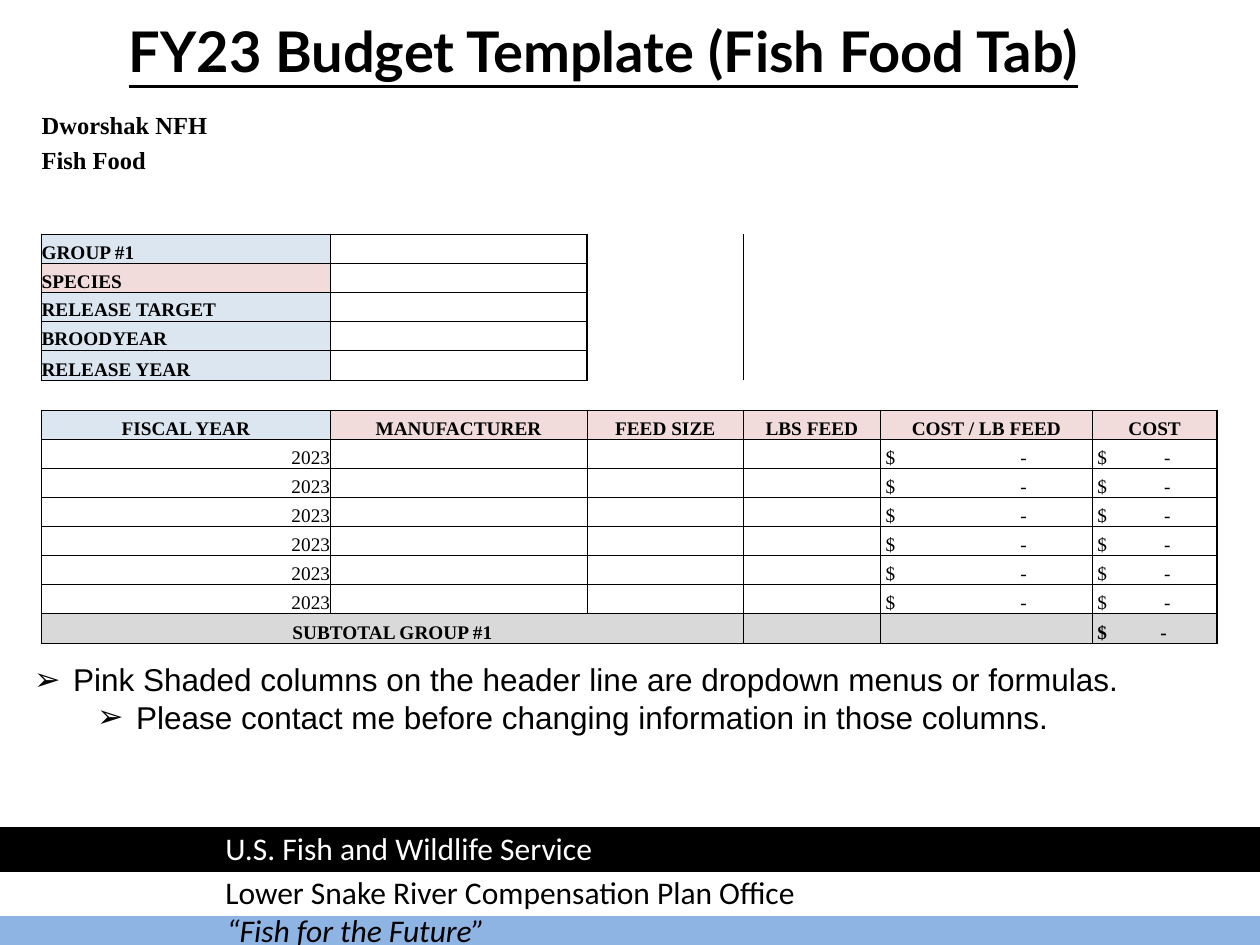
"""Build the fish food budget template slide."""
import lxml.etree
import pptx
import pptx.dml.color
import pptx.enum.shapes
import pptx.enum.text
import pptx.oxml.ns
import pptx.util

Inches = pptx.util.Inches
Pt = pptx.util.Pt
qn = pptx.oxml.ns.qn
ALIGN = pptx.enum.text.PP_ALIGN
BLUE, PINK, GRAY, WHITE, BLACK = "DCE6F1", "F2DCDB", "D9D9D9", "FFFFFF", "000000"


def color(value):
    """Return the colour for a hex string."""
    return pptx.dml.color.RGBColor.from_string(value)


def style(para, name, size, value=BLACK, bold=False):
    """Set the font of a paragraph."""
    para.font.name = name
    para.font.size = Pt(size)
    para.font.color.rgb = color(value)
    para.font.bold = bold


deck = pptx.Presentation()
deck.slide_width, deck.slide_height = Inches(10), Inches(7.5)
page = deck.slides.add_slide(deck.slide_layouts[1])

for left, top, fill in [(-0.01, 7.17, "8EB4E3"), (0, 6.93, WHITE), (0, 6.58, BLACK)]:
    band = page.shapes.add_shape(pptx.enum.shapes.MSO_SHAPE.RECTANGLE,
                                 Inches(left), Inches(top), Inches(10), Inches(0.33))
    band.shadow.inherit = False
    band.fill.solid()
    band.fill.fore_color.rgb = color(fill)
    band.line.color.rgb = color(fill)
    band.line.width = Pt(2)

footer_lines = [
    ("“Fish for the Future”", 1.7, 7.18, 2.3, BLACK, True),
    ("U.S. Fish and Wildlife Service", 1.69, 6.53, 4.16, WHITE, False),
    ("Lower Snake River Compensation Plan Office", 1.69, 6.88, 4.97, BLACK, False),
]
for text, left, top, width, value, italic in footer_lines:
    box = page.shapes.add_textbox(Inches(left), Inches(top), Inches(width), Inches(0.4))
    box.text_frame.word_wrap = True
    para = box.text_frame.paragraphs[0]
    para.text = text
    style(para, "Calibri", 18, value)
    para.font.italic = italic

title, body = page.shapes.title, page.placeholders[1]
title.text_frame.text = "FY23 Budget Template (Fish Food Tab)"
body.text_frame.text = ("Pink Shaded columns on the header line are dropdown menus or formulas.\n"
                        "Please contact me before changing information in those columns.")
for box, bounds in [(title, (0.92, 0.08, 7.83, 0.64)), (body, (0.17, 5.19, 8.89, 1.01))]:
    box.left, box.top, box.width, box.height = map(Inches, bounds)
    box.text_frame.word_wrap = False
    box.text_frame.auto_size = pptx.enum.text.MSO_AUTO_SIZE.SHAPE_TO_FIT_TEXT
    box.text_frame.vertical_anchor = pptx.enum.text.MSO_ANCHOR.TOP
    for para in box.text_frame.paragraphs:
        para.alignment = ALIGN.LEFT
        para.space_before = Pt(0)

heading = title.text_frame.paragraphs[0]
style(heading, "Lato", 32, bold=True)
heading.font.underline = True

for level, para in enumerate(body.text_frame.paragraphs):
    para.level = level
    properties = para._p.get_or_add_pPr()
    properties.set("marL", str(Inches(0.31 + 0.5 * level)))
    properties.set("indent", str(Inches(-0.31)))
    lxml.etree.SubElement(properties, qn("a:buFont")).set("typeface", "Arial")
    lxml.etree.SubElement(properties, qn("a:buChar")).set("char", "➢")
    style(para, "Arial", 18)

column_widths = [2.29, 2.04, 1.24, 1.09, 1.68, 0.99]
row_heights = [0.28, 0.28, 0.23, 0.24] + [0.23] * 4 + [0.24, 0.24] + [0.23] * 7 + [0.24]
row_count, column_count = len(row_heights), len(column_widths)
frame = page.shapes.add_table(row_count, column_count,
                              Inches(0.33), Inches(0.83), Inches(9.33), Inches(4.25))
table = frame.table
table.first_row = table.horz_banding = False
table._tbl.tblPr.find(qn("a:tableStyleId")).text = "{2D5ABB26-0587-4C30-8999-92F81FD0307C}"
for column, width in zip(table.columns, column_widths):
    column.width = Inches(width)
for row, height in zip(table.rows, row_heights):
    row.height = Inches(height)

group_labels = ["GROUP #1", "SPECIES", "RELEASE TARGET", "BROODYEAR", "RELEASE YEAR"]
headers = ["FISCAL YEAR", "MANUFACTURER", "FEED SIZE", "LBS FEED", "COST / LB FEED", "COST"]
first_column = ["Dworshak NFH", "Fish Food", "", "", *group_labels, ""]
rows = [[label] + [""] * 5 for label in first_column]
rows += [headers]
rows += [["2023", "", "", "", "$\t-", "$\t-"] for year_row in range(6)]
rows += [["SUBTOTAL GROUP #1", "", "", "", "", "$\t-"]]

fills = {(row, 0): BLUE for row in range(4, 9)}
fills.update({(10, column): PINK for column in range(column_count)})
fills.update({(17, column): GRAY for column in range(column_count)})
fills.update({(5, 0): PINK, (10, 0): BLUE})

borders = {}
sides = {"lnL": (0, -1, "lnR"), "lnR": (0, 1, "lnL"),
         "lnT": (-1, 0, "lnB"), "lnB": (1, 0, "lnT")}
for block_rows, block_columns in [(range(4, 9), range(2)), (range(10, 18), range(6))]:
    for row in block_rows:
        for column in block_columns:
            for side, (down, across, opposite) in sides.items():
                near = (row + down, column + across)
                inside = near[0] in block_rows and near[1] in block_columns
                weight = 0.5 if inside else 1
                borders[row, column, side] = weight
                borders[(*near, opposite)] = weight

table.cell(17, 0).merge(table.cell(17, 2))
for row, texts in enumerate(rows):
    for column, text in enumerate(texts):
        cell = table.cell(row, column)
        cell.margin_left = cell.margin_right = cell.margin_top = cell.margin_bottom = 0
        cell.vertical_anchor = pptx.enum.text.MSO_ANCHOR.BOTTOM
        cell.fill.solid()
        cell.fill.fore_color.rgb = color(fills.get((row, column), WHITE))
        para = cell.text_frame.paragraphs[0]
        if text.startswith("$"):
            cell.margin_left = Inches(0.04)
            tabs = lxml.etree.SubElement(para._p.get_or_add_pPr(), qn("a:tabLst"))
            stop = 1.07 if column == 4 else 0.53 if row < 17 else 0.5
            tab = lxml.etree.SubElement(tabs, qn("a:tab"))
            tab.set("pos", str(Inches(stop)))
            tab.set("algn", "l")
        if text:
            para.text = text
        else:
            para._p.get_or_add_endParaRPr().set("sz", "1100")
        style(para, "Times New Roman", 14 if row < 2 else 11, bold=not 11 <= row <= 16)
        if text == "2023":
            para.alignment = ALIGN.RIGHT
        elif row == 10 or (row, column) == (17, 0):
            para.alignment = ALIGN.CENTER
        position = 0
        for side in sides:
            weight = borders.get((row, column, side))
            if weight:
                line = lxml.etree.Element(qn("a:" + side), w=str(Pt(weight)))
                solid = lxml.etree.SubElement(line, qn("a:solidFill"))
                lxml.etree.SubElement(solid, qn("a:srgbClr")).set("val", BLACK)
                cell._tc.get_or_add_tcPr().insert(position, line)
                position += 1

deck.save("out.pptx")
